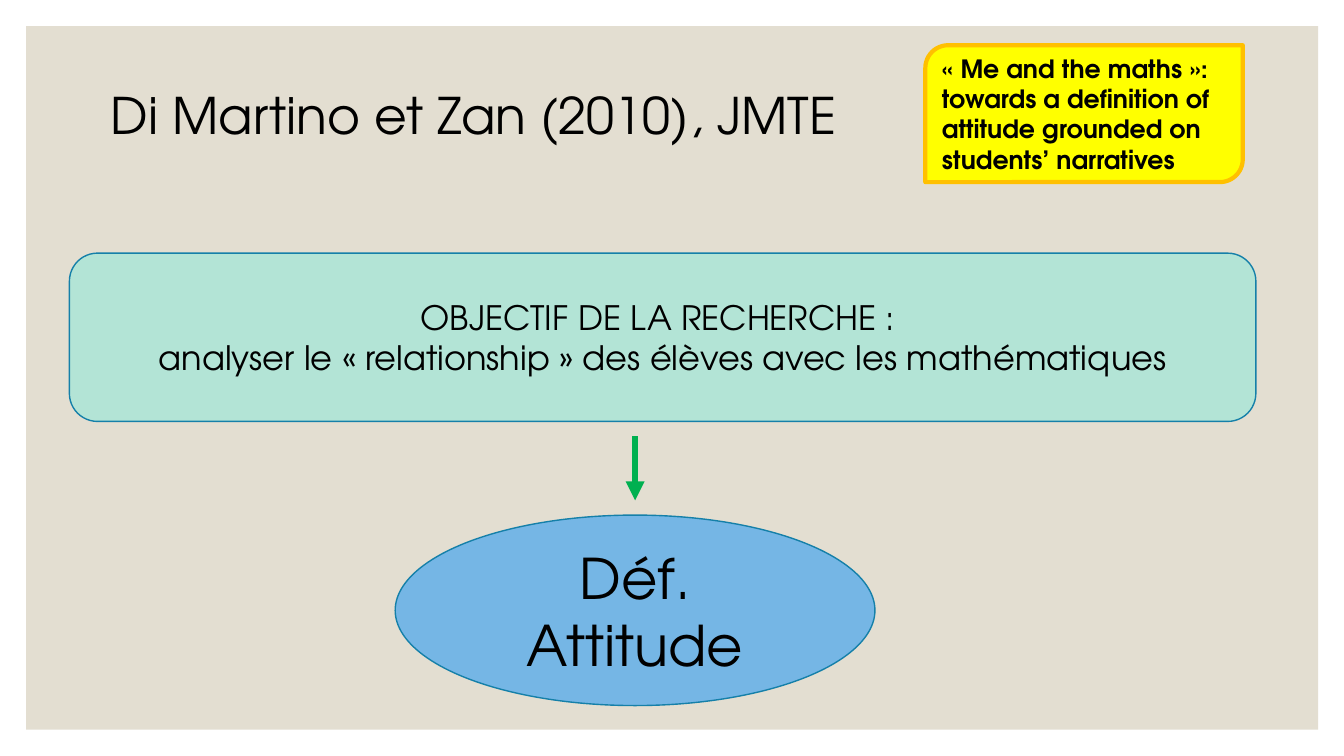
from pptx import Presentation, util as u
from pptx.dml.color import RGBColor
from pptx.enum import shapes, text
from pptx.oxml.ns import qn
from lxml import etree
from dataclasses import dataclass

# Content
TITLE = ["Di Martino et Zan (2010), JMTE"]
PAPER = ["«\u00a0Me and the maths\u00a0»: towards a definition of attitude "
         "grounded on students’ narratives"]
GOAL = ["OBJECTIF DE LA RECHERCHE : ",
        "analyser le «\u00a0relationship\u00a0» des élèves avec les mathématiques"]
RESULT = ["Déf. Attitude"]


@dataclass
class Theme:
    font: str = "TeX Gyre Adventor"
    ink: str = "000000"
    sand: str = "E3DED1"
    blue: str = "75B6E5"
    mint: str = "B3E4D6"
    edge: str = "1580A9"
    yellow: str = "FFFF00"
    gold: str = "FFC000"
    green: str = "00B050"
    title: int = 36
    large: int = 40
    body: int = 24
    note: int = 18


T = Theme()
Kind = shapes.MSO_SHAPE
Align = text.PP_ALIGN
Anchor = text.MSO_ANCHOR


def rgb(code):
    return RGBColor.from_string(code)


def write(shape, lines, size, bold=False, align=Align.CENTER,
          anchor=Anchor.MIDDLE, fit=text.MSO_AUTO_SIZE.NONE):
    frame = shape.text_frame
    frame.word_wrap = True
    frame.auto_size = fit
    frame.vertical_anchor = anchor
    frame.text = "\n".join(lines)
    for para in frame.paragraphs:
        para.alignment = align
        font = para.runs[0].font
        font.name, font.size, font.bold = T.font, u.Pt(size), bold
        font.color.rgb = rgb(T.ink)


def draw(kind, box, fill, line=None, width=1):
    shape = slide.shapes.add_shape(kind, *map(u.Cm, box))
    shape.shadow.inherit = False
    shape.fill.solid()
    shape.fill.fore_color.rgb = rgb(fill)
    if line:
        shape.line.color.rgb = rgb(line)
        shape.line.width = u.Pt(width)
    else:
        shape.line.fill.background()
    return shape


deck = Presentation()
deck.slide_width, deck.slide_height = u.Cm(33.87), u.Cm(19.05)
slide = deck.slides.add_slide(deck.slide_layouts[5])

# Sand panel, kept behind the title
panel = draw(Kind.RECTANGLE, (0.66, 0.66, 32.56, 17.73), T.sand)
title = slide.shapes.title
panel._element.getparent().remove(panel._element)
title._element.addprevious(panel._element)

# Title
title.left, title.top = u.Cm(2.54), u.Cm(1.98)
title.width, title.height = u.Cm(31.78), u.Cm(1.8)
write(title, TITLE, T.title, align=Align.LEFT, anchor=Anchor.TOP,
      fit=text.MSO_AUTO_SIZE.SHAPE_TO_FIT_TEXT)

# Result, goal and paper
result = draw(Kind.OVAL, (9.96, 12.98, 12.09, 4.8), T.blue, T.edge)
write(result, RESULT, T.large)
goal = draw(Kind.ROUNDED_RECTANGLE, (1.75, 6.38, 29.9, 4.24), T.mint, T.edge)
write(goal, GOAL, T.body)
paper = draw(Kind.ROUND_2_DIAG_RECTANGLE, (23.32, 1.14, 8, 3.45),
             T.yellow, T.gold, 3)
write(paper, PAPER, T.note, bold=True, align=Align.LEFT)

# Arrow from goal to result, centred on the result
mid = result.left + result.width // 2
gap = u.Cm(0.37)
arrow = slide.shapes.add_connector(
    shapes.MSO_CONNECTOR.STRAIGHT,
    mid, goal.top + goal.height + gap, mid, result.top - gap)
arrow.line.color.rgb = rgb(T.green)
arrow.line.width = u.Pt(4.5)
etree.SubElement(arrow.line._get_or_add_ln(), qn("a:tailEnd"), type="triangle")
etree.SubElement(arrow._element.spPr, qn("a:effectLst"))

deck.save("out.pptx")
